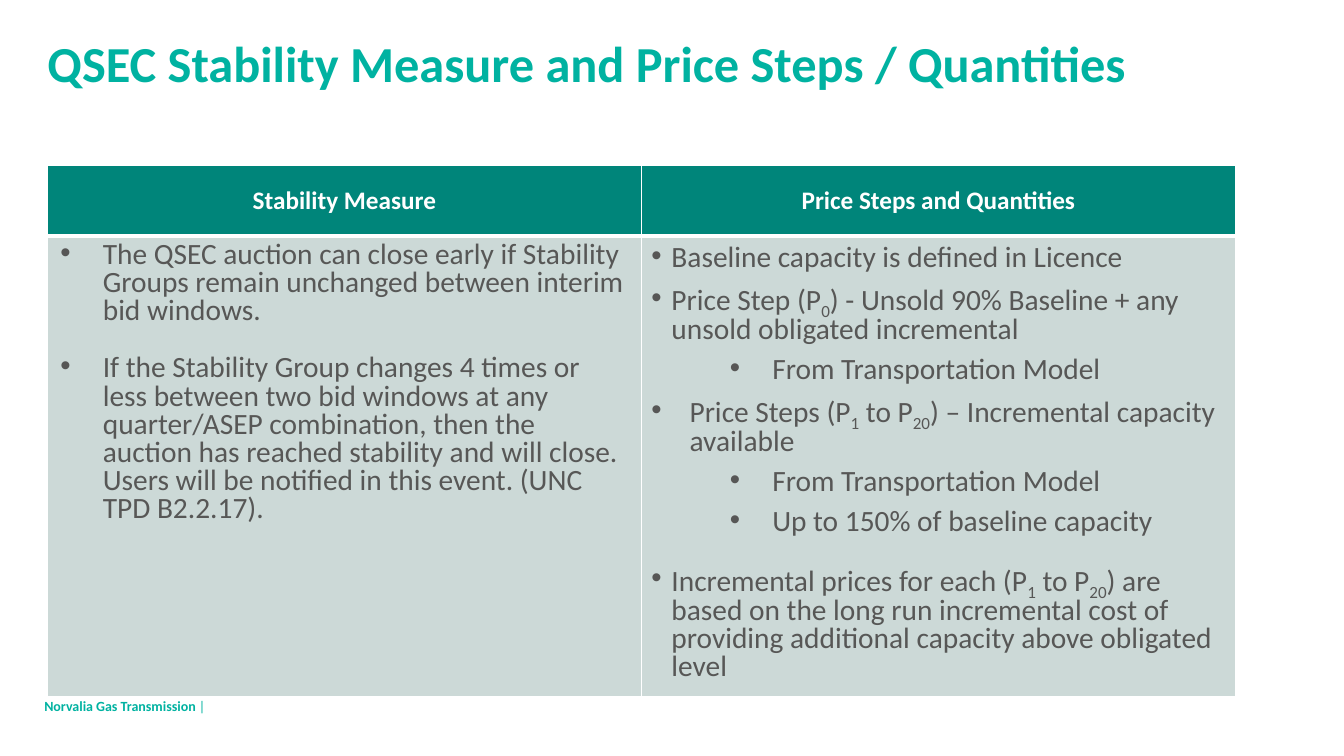
"""Build the slide on QSEC stability measure, price steps and quantities."""
from dataclasses import dataclass

from lxml import etree
from pptx import Presentation
from pptx import util as u
from pptx.dml.color import RGBColor
from pptx.enum import text
from pptx.oxml import ns

COLOURS = {
    "brand": "00B2A1",
    "header": "00857A",
    "panel": "CCD9D7",
    "body": "575756",
    "white": "FFFFFF",
}
WIDTH, HEIGHT = u.Inches(13.33), u.Inches(7.5)
FONT = "Calibri"
BODY_SIZE = 21
STEP_GAP = 0.4 * BODY_SIZE
BLOCK_GAP = 20.5
RULE, HEAVY_RULE = 1, 3
COLUMN_SHARE = 44.2
ROW_SHARES = (9.33, 60.93)
HEADINGS = ("Stability Measure", "Price Steps and Quantities")


@dataclass(frozen=True)
class Region:
    """Area given in percent of the slide's width and height."""

    left: float
    top: float
    width: float
    height: float

    def lengths(self) -> tuple[int, int, int, int]:
        """Return the area as slide lengths."""
        return (across(self.left), down(self.top), across(self.width), down(self.height))


@dataclass(frozen=True)
class Style:
    """Look of a stretch of text."""

    size: float
    colour: str
    bold: bool = False


@dataclass(frozen=True)
class Bullet:
    """Bulleted paragraph; text between tildes is subscript."""

    words: str
    indent: float
    hang: float
    before: float = 0


@dataclass(frozen=True)
class BulletList:
    """Bullets and the area they fill."""

    region: Region
    bullets: tuple[Bullet, ...]


def across(share: float) -> int:
    """Turn a percentage of the slide width into a length."""
    return round(WIDTH * share / 100)


def down(share: float) -> int:
    """Turn a percentage of the slide height into a length."""
    return round(HEIGHT * share / 100)


def main_point(words: str, before: float = STEP_GAP) -> Bullet:
    """Describe a price point with a narrow indent."""
    return Bullet(words, 0.2, 0.2, before)


def detail(words: str) -> Bullet:
    """Describe a deeply indented detail."""
    return Bullet(words, 1.2, 0.42, STEP_GAP)


TITLE = Style(36, "brand", True)
HEADING = Style(18, "white", True)
BODY = Style(BODY_SIZE, "body")
FOOTER = (("Norvalia Gas Transmission ", Style(10, "brand", True)), ("|", Style(10, "brand")))
LISTS = (
    BulletList(Region(4.5, 32, 42.24, 43.2), (
        Bullet("The QSEC auction can close early if Stability Groups remain unchanged "
               "between interim bid windows.", 0.42, 0.42),
        Bullet("If the Stability Group changes 4 times or less between two bid windows at any "
               "quarter/ASEP combination, then the auction has reached stability and will close. "
               "Users will be notified in this event. (UNC TPD B2.2.17).", 0.42, 0.42, BLOCK_GAP),
    )),
    BulletList(Region(48.46, 32.4, 42.99, 62.27), (
        main_point("Baseline capacity is defined in Licence", 0),
        main_point("Price Step (P~0~) - Unsold 90% Baseline + any unsold obligated incremental"),
        detail("From Transportation Model"),
        Bullet("Price Steps (P~1~ to P~20~) – Incremental capacity available",
               0.38, 0.38, STEP_GAP),
        detail("From Transportation Model"),
        detail("Up to 150% of baseline capacity"),
        main_point("Incremental prices for each (P~1~ to P~20~) are based on the long run "
                   "incremental cost of providing additional capacity above obligated level",
                   BLOCK_GAP),
    )),
)


def add_span(para, words: str, style: Style) -> object:
    """Append a formatted run to a paragraph."""
    span = para.add_run()
    span.text = words
    values = {"name": FONT, "size": u.Pt(style.size), "bold": style.bold}
    for name, value in values.items():
        setattr(span.font, name, value)
    span.font.color.rgb = RGBColor.from_string(COLOURS[style.colour])
    return span


def add_frame(page, region: Region, anchor=text.MSO_ANCHOR.TOP) -> object:
    """Add a wrapping text box without insets and return its frame."""
    frame = page.shapes.add_textbox(*region.lengths()).text_frame
    values = {"word_wrap": True, "vertical_anchor": anchor, "margin_left": 0,
              "margin_right": 0, "margin_top": 0, "margin_bottom": 0}
    for name, value in values.items():
        setattr(frame, name, value)
    return frame


def add_bullets(page, bullet_list: BulletList) -> None:
    """Draw a bulleted list."""
    frame = add_frame(page, bullet_list.region)
    for index, bullet in enumerate(bullet_list.bullets):
        para = frame.add_paragraph() if index else frame.paragraphs[0]
        para.line_spacing = 0.8
        para.space_before = u.Pt(bullet.before)
        properties = para._p.get_or_add_pPr()
        properties.set("marL", str(u.Inches(bullet.indent)))
        properties.set("indent", str(-u.Inches(bullet.hang)))
        etree.SubElement(properties, ns.qn("a:buFont")).set("typeface", "Arial")
        etree.SubElement(properties, ns.qn("a:buChar")).set("char", "•")
        for position, words in enumerate(bullet.words.split("~")):
            span = add_span(para, words, BODY)
            if position % 2:
                span.font._element.set("baseline", "-25000")


def set_borders(cell, top: float, bottom: float) -> None:
    """Give a cell white borders with the given top and bottom widths in points."""
    properties = cell._tc.get_or_add_tcPr()
    widths = {"lnL": RULE, "lnR": RULE, "lnT": top, "lnB": bottom}
    for index, (side, width) in enumerate(widths.items()):
        line = etree.Element(ns.qn(f"a:{side}"), w=str(u.Pt(width)))
        fill = etree.SubElement(line, ns.qn("a:solidFill"))
        etree.SubElement(fill, ns.qn("a:srgbClr")).set("val", COLOURS["white"])
        properties.insert(index, line)


def add_panel_table(page) -> None:
    """Draw the table that holds the headings and backs the lists."""
    columns = len(HEADINGS)
    region = Region(3.53, 21.87, COLUMN_SHARE * columns, sum(ROW_SHARES))
    table = page.shapes.add_table(len(ROW_SHARES), columns, *region.lengths()).table
    table.horz_banding = False
    for row, share in zip(table.rows, ROW_SHARES):
        row.height = down(share)
    for index, heading in enumerate(HEADINGS):
        table.columns[index].width = across(COLUMN_SHARE)
        header, panel = table.cell(0, index), table.cell(1, index)
        for cell, colour in ((header, "header"), (panel, "panel")):
            cell.fill.solid()
            cell.fill.fore_color.rgb = RGBColor.from_string(COLOURS[colour])
        set_borders(header, RULE, HEAVY_RULE)
        set_borders(panel, HEAVY_RULE, RULE)
        header.vertical_anchor = text.MSO_ANCHOR.MIDDLE
        para = header.text_frame.paragraphs[0]
        para.alignment = text.PP_ALIGN.CENTER
        add_span(para, heading, HEADING)


def main() -> None:
    """Assemble and save the deck."""
    deck = Presentation()
    deck.slide_width, deck.slide_height = WIDTH, HEIGHT
    page = deck.slides.add_slide(deck.slide_layouts[6])
    footer = add_frame(page, Region(3.3, 91.73, 13.13, 3.2), text.MSO_ANCHOR.MIDDLE)
    for words, style in FOOTER:
        add_span(footer.paragraphs[0], words, style)
    title = add_frame(page, Region(3.53, 5.2, 92.57, 15.2)).paragraphs[0]
    title.line_spacing = 0.9
    add_span(title, "QSEC Stability Measure and Price Steps / Quantities", TITLE)
    add_panel_table(page)
    for bullet_list in LISTS:
        add_bullets(page, bullet_list)
    deck.save("out.pptx")


if __name__ == "__main__":
    main()
